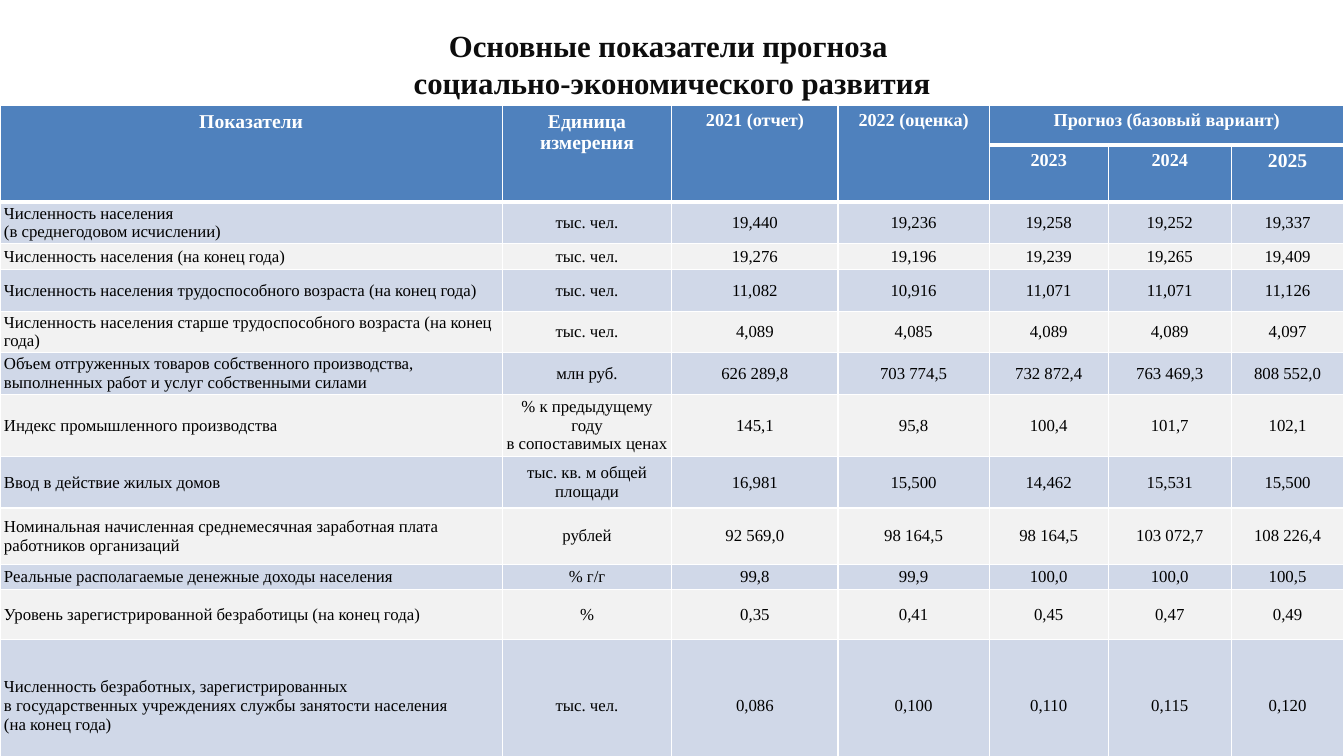
from pptx import Presentation
from pptx.dml.color import RGBColor as RGB
from pptx.enum.text import MSO_ANCHOR as Anchor, MSO_AUTO_SIZE as Fit, PP_ALIGN as Align
from pptx.oxml import parse_xml
from pptx.oxml.ns import nsdecls
from pptx.util import Cm, Pt

FONT = "Times New Roman"
COLORS = {"title": "0D0D0D", "head": "4F81BD", "white": "FFFFFF",
          "text": "000000", "blue": "D0D8E8", "gray": "F2F2F2"}
TITLE = "Основные показатели прогноза \nсоциально-экономического развития"
WIDTHS = [12.66, 4.27, 4.19, 3.81, 3.0, 3.1, 2.84]
HEIGHTS = [0.99, 1.42, 1.05, 0.66, 1.04, 1.05, 1.04, 1.58, 1.29, 1.42, 0.64, 1.25, 3.35]

# row, column, last row, last column, text, size
HEADS = [
    (0, 0, 1, 0, "Показатели", 14),
    (0, 1, 1, 1, "Единица измерения", 14),
    (0, 2, 1, 2, "2021 (отчет)", 13),
    (0, 3, 1, 3, "2022 (оценка)", 13),
    (0, 4, 0, 6, "Прогноз (базовый вариант)", 13),
    (1, 4, 1, 4, "2023", 13),
    (1, 5, 1, 5, "2024", 13),
    (1, 6, 1, 6, "2025", 14),
]
ROWS = [
    ("Численность населения \n(в среднегодовом исчислении)",
     "тыс. чел.", "19,440", "19,236", "19,258", "19,252", "19,337"),
    ("Численность населения (на конец года)",
     "тыс. чел.", "19,276", "19,196", "19,239", "19,265", "19,409"),
    ("Численность населения трудоспособного возраста (на конец года)",
     "тыс. чел.", "11,082", "10,916", "11,071", "11,071", "11,126"),
    ("Численность населения старше трудоспособного возраста (на конец года)",
     "тыс. чел.", "4,089", "4,085", "4,089", "4,089", "4,097"),
    ("Объем отгруженных товаров собственного производства, "
     "выполненных работ и услуг собственными силами",
     "млн руб.", "626 289,8", "703 774,5", "732 872,4", "763 469,3", "808 552,0"),
    ("Индекс промышленного производства",
     "% к предыдущему году\nв сопоставимых ценах",
     "145,1", "95,8", "100,4", "101,7", "102,1"),
    ("Ввод в действие жилых домов",
     "тыс. кв. м общей площади", "16,981", "15,500", "14,462", "15,531", "15,500"),
    ("Номинальная начисленная среднемесячная заработная плата работников организаций",
     "рублей", "92 569,0", "98 164,5", "98 164,5", "103 072,7", "108 226,4"),
    ("Реальные располагаемые денежные доходы населения",
     "% г/г", "99,8", "99,9", "100,0", "100,0", "100,5"),
    ("Уровень зарегистрированной безработицы (на конец года)",
     "%", "0,35", "0,41", "0,45", "0,47", "0,49"),
    ("Численность безработных, зарегистрированных \n"
     "в государственных учреждениях службы занятости населения \n(на конец года)",
     "тыс. чел.", "0,086", "0,100", "0,110", "0,115", "0,120"),
]


def style(para, size, color, bold=False, align=Align.CENTER):
    para.alignment = align
    for run in para.runs:
        font = run.font
        font.name, font.size, font.bold = FONT, Pt(size), bold
        font.color.rgb = RGB.from_string(COLORS[color])


def paint(cell, fill, top=1, bottom=1):
    """Give the cell white borders, widths in points, and a plain fill."""
    props = cell._tc.get_or_add_tcPr()
    for side, width in (("L", 1), ("R", 1), ("T", top), ("B", bottom)):
        props.append(parse_xml(
            f'<a:ln{side} {nsdecls("a")} w="{Pt(width)}"><a:solidFill>'
            f'<a:srgbClr val="{COLORS["white"]}"/></a:solidFill></a:ln{side}>'))
    cell.fill.solid()
    cell.fill.fore_color.rgb = RGB.from_string(COLORS[fill])


def add_title(slide):
    title = slide.shapes.title
    title.left, title.top, title.width, title.height = Cm(0), Cm(0.53), Cm(33.87), Cm(2.13)
    frame = title.text_frame
    frame.text = TITLE
    frame.word_wrap = True
    frame.auto_size = Fit.SHAPE_TO_FIT_TEXT
    frame.vertical_anchor = Anchor.MIDDLE
    for para in frame.paragraphs:
        style(para, 22, "title", True)


def fill_head(table):
    for row, col, last, end, text, size in HEADS:
        cell = table.cell(row, col)
        if (row, col) != (last, end):
            cell.merge(table.cell(last, end))
        para = cell.text_frame.paragraphs[0]
        para.text = text
        style(para, size, "white", True)
        paint(cell, "head", top=3 if row else 1, bottom=3)


def fill_body(table):
    for row, texts in enumerate(ROWS):
        for col, text in enumerate(texts):
            cell = table.cell(row + 2, col)
            cell.margin_left = cell.margin_right = Cm(0.1)
            cell.margin_top = cell.margin_bottom = Cm(0)
            cell.vertical_anchor = Anchor.MIDDLE
            para = cell.text_frame.paragraphs[0]
            para.text = text
            style(para, 12, "text", align=Align.CENTER if col else Align.LEFT)
            paint(cell, "gray" if row % 2 else "blue", top=1 if row else 3)


def add_grid(slide):
    table = slide.shapes.add_table(
        len(HEIGHTS), len(WIDTHS), Cm(0), Cm(2.66),
        Cm(sum(WIDTHS)), Cm(sum(HEIGHTS))).table
    table.horz_banding = False
    for col, width in zip(table.columns, WIDTHS):
        col.width = Cm(width)
    for row, height in zip(table.rows, HEIGHTS):
        row.height = Cm(height)
    fill_head(table)
    fill_body(table)


def main():
    deck = Presentation()
    deck.slide_width, deck.slide_height = Cm(33.87), Cm(19.05)
    slide = deck.slides.add_slide(deck.slide_layouts[5])
    add_title(slide)
    add_grid(slide)
    deck.save("out.pptx")


if __name__ == "__main__":
    main()
